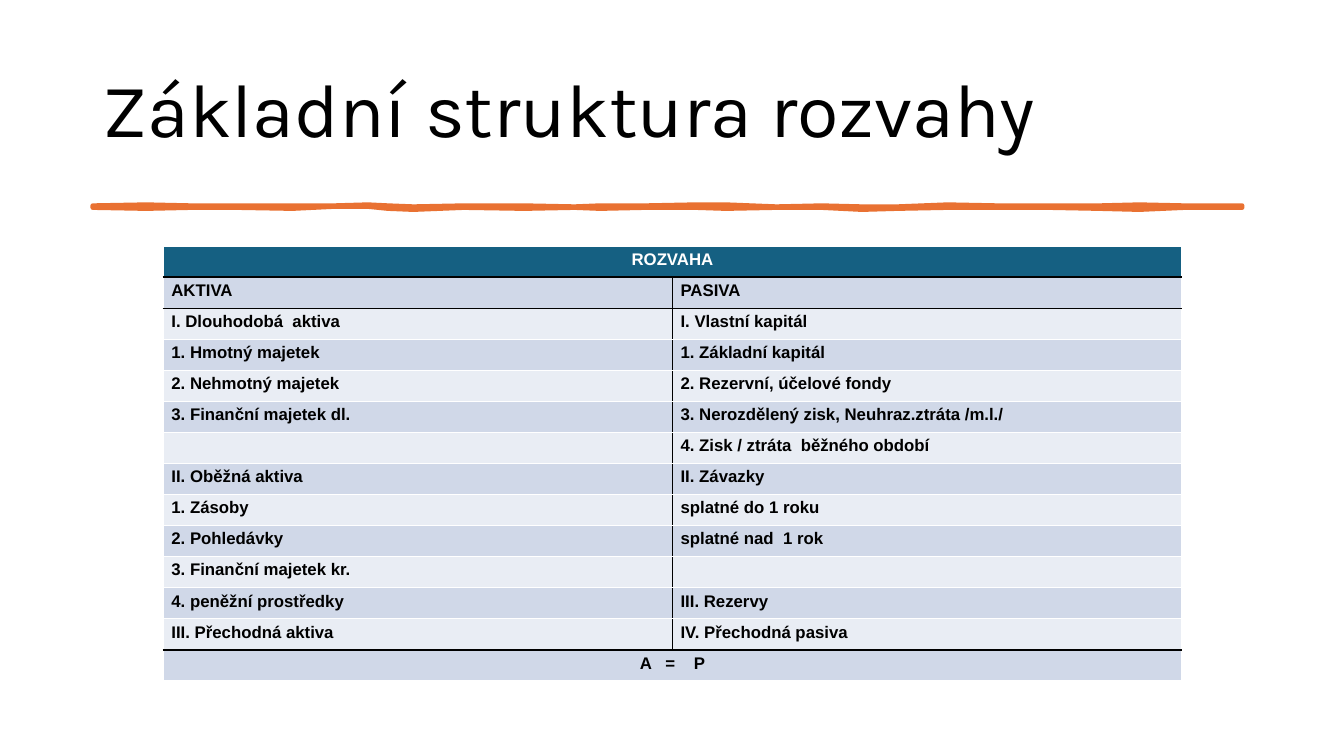
from lxml.etree import SubElement
from pptx import Presentation
from pptx.dml.color import RGBColor
from pptx.enum.text import MSO_ANCHOR, MSO_AUTO_SIZE, PP_ALIGN
from pptx.oxml.ns import qn
from pptx.util import Inches, Pt

TITLE = "Základní struktura rozvahy"
BALANCE = [
    ("ROZVAHA", ""),
    ("AKTIVA", "PASIVA"),
    ("I. Dlouhodobá  aktiva", "I. Vlastní kapitál"),
    ("1. Hmotný majetek", "1. Základní kapitál"),
    ("2. Nehmotný majetek", "2. Rezervní, účelové fondy"),
    ("3. Finanční majetek dl.", "3. Nerozdělený zisk, Neuhraz.ztráta /m.l./"),
    ("", "4. Zisk / ztráta  běžného období"),
    ("II. Oběžná aktiva", "II. Závazky"),
    ("1. Zásoby", "splatné do 1 roku"),
    ("2. Pohledávky", "splatné nad  1 rok"),
    ("3. Finanční majetek kr.", ""),
    ("4. peněžní prostředky", "III. Rezervy"),
    ("III. Přechodná aktiva", "IV. Přechodná pasiva"),
    ("A   =    P", ""),
]
LAST = len(BALANCE) - 1
MERGED = (0, LAST)
RULED_BELOW = (0, 1, LAST - 1)

# x, top and bottom of the hand-drawn rule
STROKE = [
    (0.92, 2.04, 2.06), (1.45, 2.03, 2.07), (1.9, 2.04, 2.06), (2.35, 2.04, 2.06),
    (2.9, 2.04, 2.07), (3.31, 2.04, 2.05), (3.65, 2.03, 2.05), (3.85, 2.04, 2.07),
    (4.1, 2.05, 2.08), (4.6, 2.04, 2.06), (5.2, 2.04, 2.07), (5.7, 2.05, 2.06),
    (5.95, 2.04, 2.07), (6.4, 2.04, 2.06), (6.9, 2.03, 2.06), (7.2, 2.03, 2.07),
    (7.7, 2.05, 2.06), (8.15, 2.04, 2.06), (8.55, 2.05, 2.08), (8.9, 2.05, 2.07),
    (9.4, 2.03, 2.06), (9.9, 2.04, 2.06), (10.4, 2.04, 2.06), (10.9, 2.04, 2.07),
    (11.3, 2.03, 2.08), (11.75, 2.04, 2.06), (12.32, 2.04, 2.06),
]


def color(code):
    return RGBColor.from_string(code)


def write(frame, text, font="Arial", size=12, bold=True, ink="000000", align=PP_ALIGN.LEFT):
    paragraph = frame.paragraphs[0]
    paragraph.alignment = align
    if not text:  # keeps the height of an empty cell
        paragraph._p.get_or_add_endParaRPr().set("sz", str(size * 100))
        return
    run = paragraph.add_run()
    run.text = text
    run.font.name, run.font.size, run.font.bold = font, Pt(size), bold
    run.font.color.rgb = color(ink)


def set_borders(cell, **sides):
    """Draw 1 pt borders; sides must come in the order L, R, T, B."""
    properties = cell._tc.get_or_add_tcPr()
    for side, code in sides.items():
        line = SubElement(properties, qn(f"a:ln{side}"), w=str(Pt(1)))
        SubElement(SubElement(line, qn("a:solidFill")), qn("a:srgbClr"), val=code)


def add_title(slide):
    title = slide.shapes.title
    title.left, title.top, title.width, title.height = map(Inches, (0.92, 0.4, 11.5, 1.45))
    frame = title.text_frame
    frame.auto_size = MSO_AUTO_SIZE.NONE
    frame.vertical_anchor = MSO_ANCHOR.MIDDLE
    write(frame, TITLE, font="Karla", size=54, bold=False)
    frame.paragraphs[0].line_spacing = 0.9


def add_stroke(slide):
    upper = [(x, top) for x, top, _ in STROKE]
    lower = [(x, bottom) for x, _, bottom in reversed(STROKE)]
    start, *rest = [(Inches(x), Inches(y)) for x, y in upper + lower]
    builder = slide.shapes.build_freeform(*start)
    builder.add_line_segments(rest, close=True)
    stroke = builder.convert_to_shape()
    stroke.shadow.inherit = False
    stroke.fill.solid()
    stroke.fill.fore_color.rgb = color("E97132")
    stroke.line.color.rgb = color("E97132")
    stroke.line.width = Pt(3.25)
    SubElement(stroke.line._get_or_add_ln(), qn("a:round"))


def add_balance(slide):
    table = slide.shapes.add_table(
        len(BALANCE), 2, Inches(1.62), Inches(2.44), Inches(10.1), Inches(4.32)).table
    for r, entries in enumerate(BALANCE):
        merged = r in MERGED
        top = "000000" if r - 1 in RULED_BELOW else "FFFFFF"
        bottom = "000000" if r in RULED_BELOW else "FFFFFF"
        middle = "FFFFFF" if merged else "000000"
        band = "156082" if r == 0 else ("E9EDF4", "D0D8E8")[r % 2]
        for c, entry in enumerate(entries):
            cell = table.cell(r, c)
            cell.margin_left = cell.margin_right = Inches(0.08)
            cell.margin_top = cell.margin_bottom = Inches(0.04)
            set_borders(cell, L=middle if c else "FFFFFF", R="FFFFFF" if c else middle,
                        T=top, B=bottom)
            cell.fill.solid()
            cell.fill.fore_color.rgb = color(band)
            write(cell.text_frame, entry, ink="000000" if r else "FFFFFF",
                  align=PP_ALIGN.CENTER if merged else PP_ALIGN.LEFT)
        if merged:
            table.cell(r, 0).merge(table.cell(r, 1))


def main():
    deck = Presentation()
    deck.slide_width, deck.slide_height = Inches(13.33), Inches(7.5)
    slide = deck.slides.add_slide(deck.slide_layouts[5])
    add_title(slide)
    add_stroke(slide)
    add_balance(slide)
    deck.save("out.pptx")


if __name__ == "__main__":
    main()
